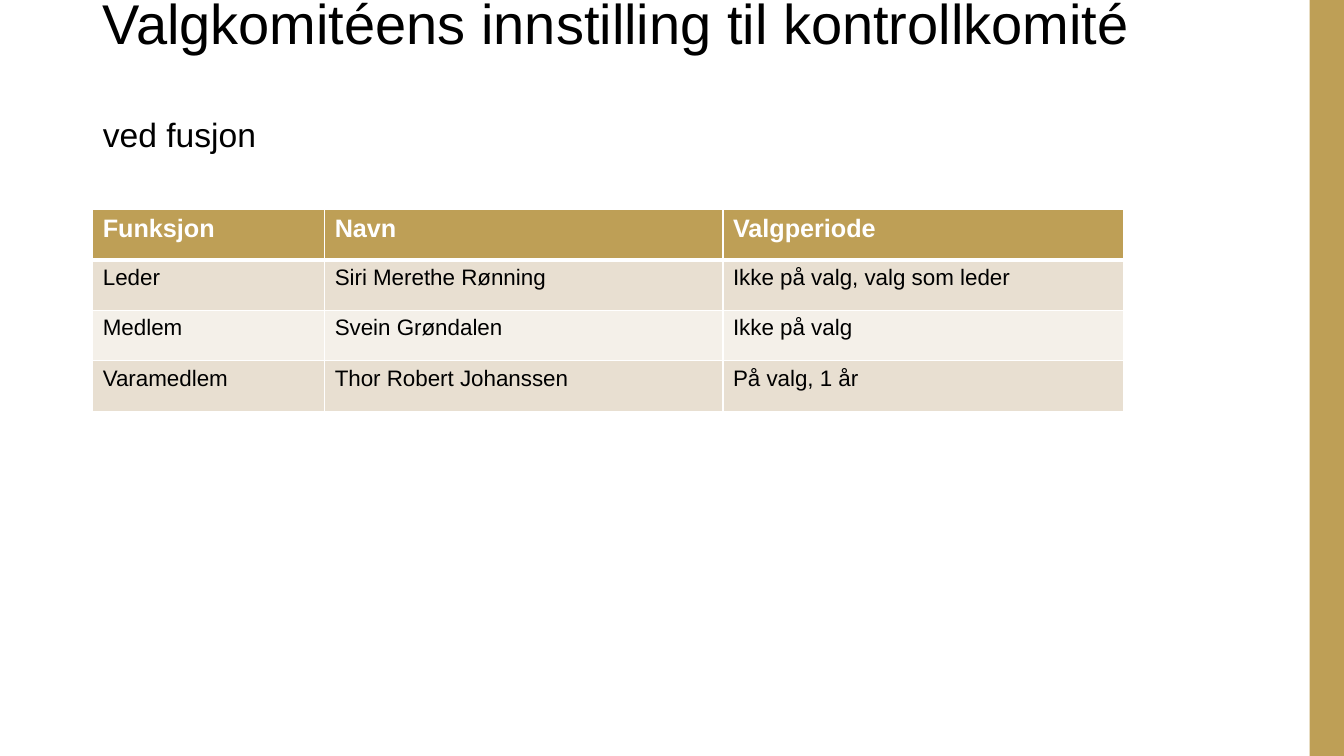
from lxml.etree import SubElement
from pptx import Presentation
from pptx.dml.color import RGBColor
from pptx.enum.shapes import MSO_SHAPE as Shape
from pptx.enum.text import MSO_ANCHOR as Anchor, MSO_AUTO_SIZE as AutoSize, PP_ALIGN as Align
from pptx.oxml.ns import qn
from pptx.util import Inches, Pt

GOLD = RGBColor(0xBE, 0x9F, 0x56)
SAND = RGBColor(0xE8, 0xDF, 0xD1)
CREAM = RGBColor(0xF4, 0xF0, 0xE9)
WHITE = RGBColor(0xFF, 0xFF, 0xFF)
BLACK = RGBColor(0, 0, 0)
FONT = "Arial"

COLUMN_WIDTHS = [2.3, 3.95, 3.97]
ROWS = [
    ("Funksjon", "Navn", "Valgperiode"),
    ("Leder", "Siri Merethe Rønning", "Ikke på valg, valg som leder"),
    ("Medlem", "Svein Grøndalen", "Ikke på valg"),
    ("Varamedlem", "Thor Robert Johanssen", "På valg, 1 år"),
]


def style_text(para, size, color, bold=False):
    for span in para.runs:
        font = span.font
        font.name, font.size, font.bold = FONT, Pt(size), bold
        font.color.rgb = color


def add_side_bar(slide, left, top, width, height):
    bar = slide.shapes.add_shape(
        Shape.RECTANGLE, Inches(left), Inches(top), Inches(width), Inches(height))
    bar.shadow.inherit = False
    bar.fill.solid()
    bar.fill.fore_color.rgb = GOLD
    bar.line.fill.background()


def fill_title(slide, left, top, width, height):
    title = slide.shapes.title
    title.left, title.top = Inches(left), Inches(top)
    title.width, title.height = Inches(width), Inches(height)
    frame = title.text_frame
    frame.word_wrap = True
    frame.auto_size = AutoSize.NONE
    frame.vertical_anchor = Anchor.BOTTOM
    frame.text = "Valgkomitéens innstilling til kontrollkomité\nved fusjon"
    heading, subheading = frame.paragraphs
    for para, size in ((heading, 40), (subheading, 24)):
        para.alignment = Align.LEFT
        para.line_spacing = 0.9
        para.space_before = Pt(0)
        style_text(para, size, BLACK)
    subheading.space_before = Pt(44.5)


def set_borders(cell, widths):
    """Draw white borders; widths maps a side (L, R, T, B) to points."""
    properties = cell._tc.get_or_add_tcPr()
    for position, (side, width) in enumerate(widths.items()):
        line = properties.makeelement(qn(f"a:ln{side}"), {"w": str(Pt(width))})
        fill = SubElement(line, qn("a:solidFill"))
        SubElement(fill, qn("a:srgbClr"), val=str(WHITE))
        properties.insert(position, line)


def add_committee_table(slide, left, top, width, row_height):
    frame = slide.shapes.add_table(
        len(ROWS), len(COLUMN_WIDTHS), Inches(left), Inches(top),
        Inches(width), Inches(row_height * len(ROWS)))
    table = frame.table
    for column, share in zip(table.columns, COLUMN_WIDTHS):
        column.width = Inches(width * share / sum(COLUMN_WIDTHS))
    for row_index, texts in enumerate(ROWS):
        table.rows[row_index].height = Inches(row_height)
        header = row_index == 0
        color = GOLD if header else (CREAM, SAND)[row_index % 2]
        for column_index, text in enumerate(texts):
            cell = table.cell(row_index, column_index)
            cell.text = text
            style_text(cell.text_frame.paragraphs[0], 18 if header else 16,
                       WHITE if header else BLACK, header)
            cell.fill.solid()
            cell.fill.fore_color.rgb = color
            set_borders(cell, {"L": 1, "R": 1, "T": 3 if row_index == 1 else 1,
                               "B": 3 if header else 1})


def main():
    deck = Presentation()
    deck.slide_width, deck.slide_height = Inches(13.33), Inches(7.5)
    slide = deck.slides.add_slide(deck.slide_layouts[5])
    add_side_bar(slide, 12.99, 0, 0.34, 7.5)
    fill_title(slide, 0.92, 0.4, 10.51, 1.19)
    add_committee_table(slide, 0.92, 2.08, 10.22, 0.5)
    deck.save("out.pptx")


if __name__ == "__main__":
    main()
